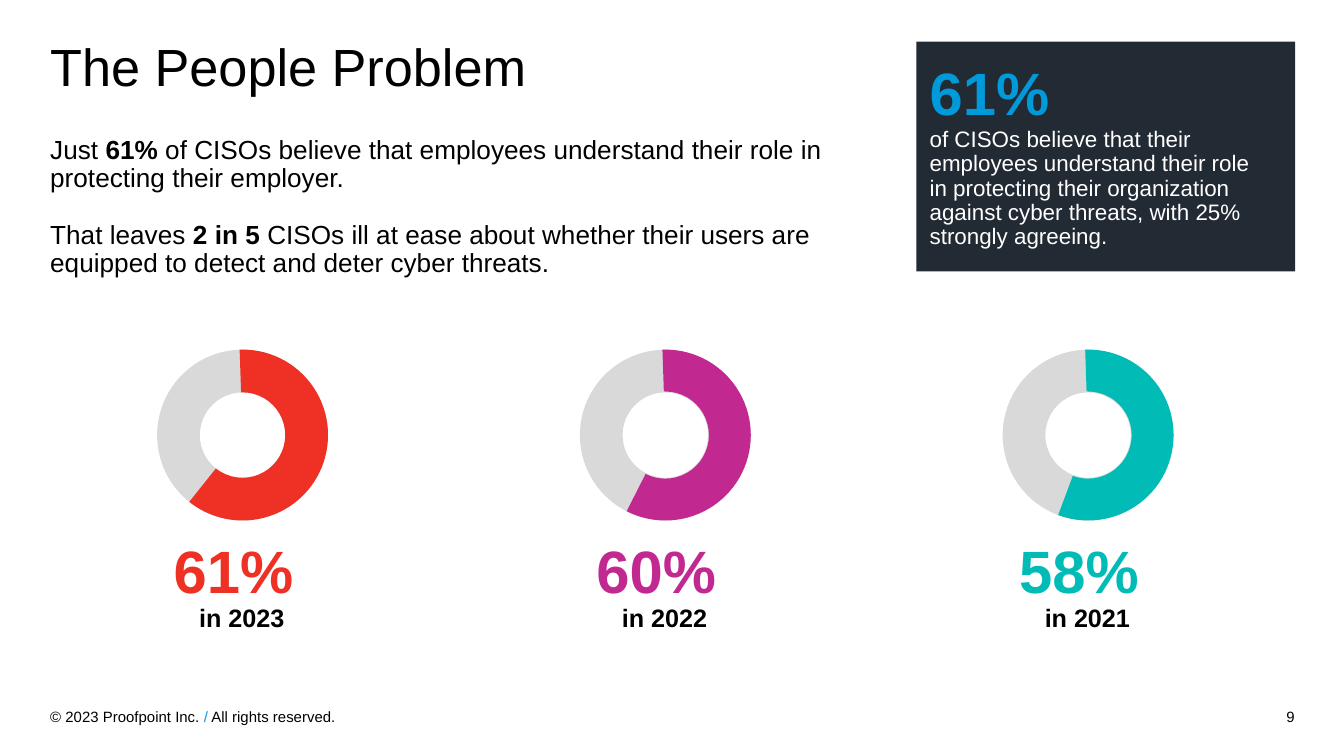
"""Build the slide The People Problem with three yearly ring gauges."""
from pptx import Presentation
from pptx.dml.color import RGBColor
from pptx.enum.shapes import MSO_SHAPE
from pptx.enum.text import MSO_ANCHOR, PP_ALIGN
from pptx.util import Cm, Pt

RECTANGLE, DONUT, BLOCK_ARC = MSO_SHAPE.RECTANGLE, MSO_SHAPE.DONUT, MSO_SHAPE.BLOCK_ARC
TOP, MIDDLE = MSO_ANCHOR.TOP, MSO_ANCHOR.MIDDLE
LEFT, CENTER, RIGHT = PP_ALIGN.LEFT, PP_ALIGN.CENTER, PP_ALIGN.RIGHT

BLACK = RGBColor(0x00, 0x00, 0x00)
WHITE = RGBColor(0xFF, 0xFF, 0xFF)
BLUE = RGBColor(0x00, 0x9A, 0xDA)
NAVY = RGBColor(0x22, 0x2A, 0x34)
GRAY = RGBColor(0xD9, 0xD9, 0xD9)
RED = RGBColor(0xEE, 0x31, 0x24)
MAGENTA = RGBColor(0xC2, 0x29, 0x90)
TEAL = RGBColor(0x00, 0xBB, 0xB6)


def fill_text(tf, paragraphs, align=LEFT, anchor=TOP, spacing=0.9, gap=0):
    tf.word_wrap = True
    tf.vertical_anchor = anchor
    for i, runs in enumerate(paragraphs):
        p = tf.add_paragraph() if i else tf.paragraphs[0]
        p.alignment = align
        p.line_spacing = spacing
        if i and gap:
            p.space_before = Pt(gap)
        p.text = "".join(text for text, *_ in runs)
        p.clear()
        for text, size, color, bold in runs:
            if text == "\v":
                p.add_line_break()
                continue
            r = p.add_run()
            r.text = text
            r.font.name = "Arial"
            r.font.size = Pt(size)
            r.font.bold = bold
            r.font.color.rgb = color


def add_text(left, top, width, height, paragraphs, **layout):
    tf = s.shapes.add_textbox(Cm(left), Cm(top), Cm(width), Cm(height)).text_frame
    tf.margin_left = tf.margin_top = tf.margin_right = tf.margin_bottom = 0
    fill_text(tf, paragraphs, **layout)


prs = Presentation()
prs.slide_width, prs.slide_height = Cm(25.4), Cm(14.29)
s = prs.slides.add_slide(prs.slide_layouts[6])

add_text(0.95, 13.31, 11.75, 0.46, [[
    ("© 2023 Proofpoint Inc. ", 8, BLACK, False),
    ("/", 8, BLUE, False),
    (" All rights reserved.", 8, BLACK, False),
]], anchor=MIDDLE, spacing=1.0)
add_text(19.39, 13.31, 5.08, 0.46, [[("9", 8, BLACK, False)]],
         align=RIGHT, anchor=MIDDLE, spacing=1.0)

add_text(0.95, 0.79, 16, 2.24, [[("The People Problem", 28, BLACK, False)]])
add_text(0.95, 2.59, 14.68, 2.92, [
    [("Just ", 14, BLACK, False),
     ("61%", 14, BLACK, True),
     (" of CISOs believe that employees understand their role in protecting their employer.",
      14, BLACK, False)],
    [("That leaves ", 14, BLACK, False),
     ("2 in 5 ", 14, BLACK, True),
     ("CISOs ill at ease about whether their users are equipped to detect and deter "
      "cyber threats.", 14, BLACK, False)],
], gap=15)

gauges = [
    ("61% ", "in 2023", RED, 77.14, 0.25),
    ("60% ", "in 2022", MAGENTA, 70.15, 0.245),
    ("58% ", "in 2021", TEAL, 66.3, 0.245),
]
for i, (share, year, color, end, thickness) in enumerate(gauges):
    left = 2.97 + i * 7.99
    add_text(left - 0.28, 10.24, 3.76, 2.26,
             [[(share, 32, color, True)], [(year, 13.5, BLACK, True)]], align=CENTER)
    for kind, fill, adjustments in (
        (DONUT, GRAY, [0.25]),
        (BLOCK_ARC, color, [160.83, end, thickness]),
    ):
        sp = s.shapes.add_shape(kind, Cm(left), Cm(6.61), Cm(3.23), Cm(3.23))
        sp.shadow.inherit = False
        sp.fill.solid()
        sp.fill.fore_color.rgb = fill
        sp.line.fill.background()
        for n, value in enumerate(adjustments):
            sp.adjustments[n] = value

sp = s.shapes.add_shape(RECTANGLE, Cm(17.32), Cm(0.79), Cm(7.16), Cm(4.34))
sp.shadow.inherit = False
sp.fill.solid()
sp.fill.fore_color.rgb = NAVY
sp.line.fill.background()
fill_text(sp.text_frame, [
    [("61% ", 32, BLUE, True),
     ("\v", 32, BLUE, True),
     ("of CISOs believe that their employees understand their role", 12, WHITE, False)],
    [("in protecting their organization against cyber threats, with 25%", 12, WHITE, False)],
    [("strongly agreeing.", 12, WHITE, False)],
], anchor=MIDDLE)

prs.save("out.pptx")
